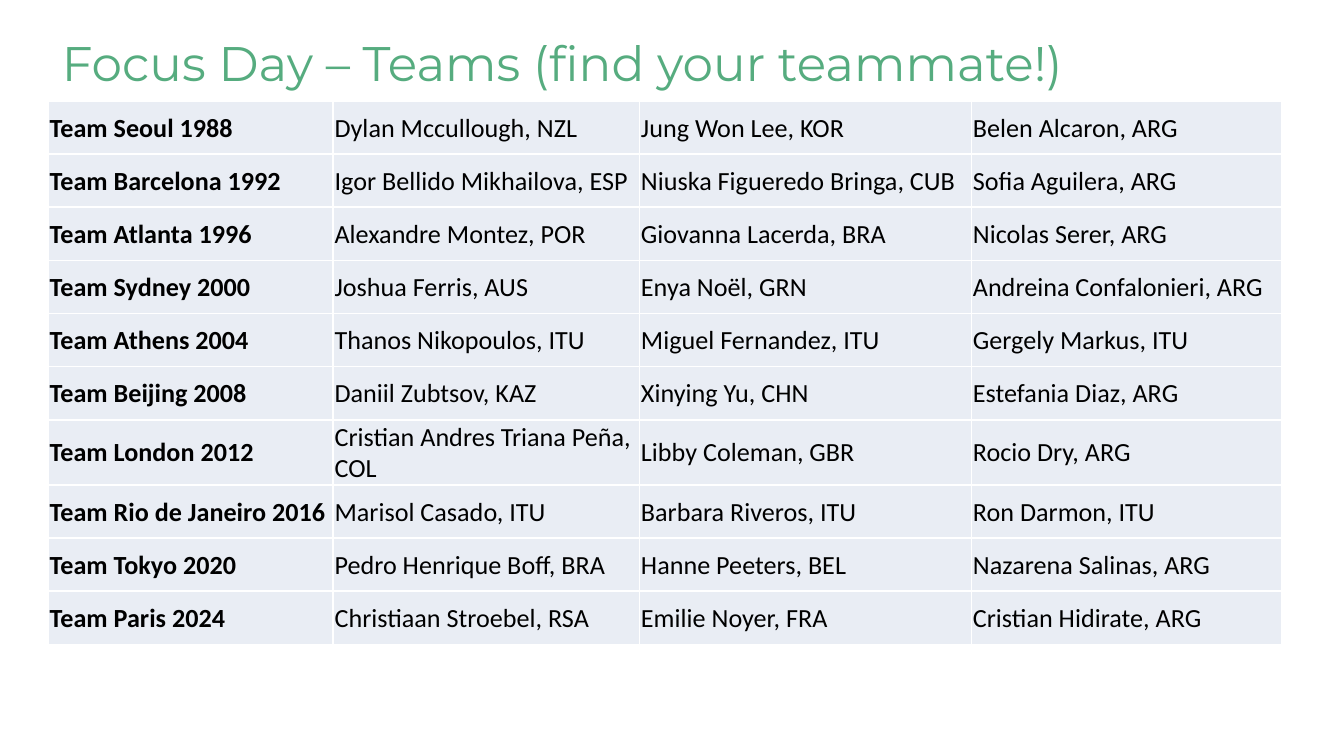
from lxml.etree import SubElement
from pptx import Presentation
from pptx.dml.color import RGBColor
from pptx.enum.text import MSO_ANCHOR, PP_ALIGN
from pptx.oxml.ns import qn
from pptx.util import Inches, Pt

GREEN = RGBColor(0x56, 0xAC, 0x7F)
PALE = RGBColor(0xE9, 0xED, 0xF4)
WHITE = RGBColor(0xFF, 0xFF, 0xFF)
BLACK = RGBColor(0, 0, 0)

TEAMS = [
    ("Team Seoul 1988", "Dylan Mccullough, NZL", "Jung Won Lee, KOR", "Belen Alcaron, ARG"),
    ("Team Barcelona 1992", "Igor Bellido Mikhailova, ESP", "Niuska Figueredo Bringa, CUB", "Sofia Aguilera, ARG"),
    ("Team Atlanta 1996", "Alexandre Montez, POR", "Giovanna Lacerda, BRA", "Nicolas Serer, ARG"),
    ("Team Sydney 2000", "Joshua Ferris, AUS", "Enya Noël, GRN", "Andreina Confalonieri, ARG"),
    ("Team Athens 2004", "Thanos Nikopoulos, ITU", "Miguel Fernandez, ITU", "Gergely Markus, ITU"),
    ("Team Beijing 2008", "Daniil Zubtsov, KAZ", "Xinying Yu, CHN", "Estefania Diaz, ARG"),
    ("Team London 2012", "Cristian Andres Triana Peña, COL", "Libby Coleman, GBR", "Rocio Dry, ARG"),
    ("Team Rio de Janeiro 2016", "Marisol Casado, ITU", "Barbara Riveros, ITU", "Ron Darmon, ITU"),
    ("Team Tokyo 2020", "Pedro Henrique Boff, BRA", "Hanne Peeters, BEL", "Nazarena Salinas, ARG"),
    ("Team Paris 2024", "Christiaan Stroebel, RSA", "Emilie Noyer, FRA", "Cristian Hidirate, ARG"),
]
COLUMNS = [Inches(w) for w in (2.12, 2.28, 2.47, 2.31)]
ROW = Pt(28.5)
LEFT = Inches(0.36)
WIDTH = sum(COLUMNS)


def style_run(r, font, size, color, bold):
    r.font.name = font
    r.font.size = Pt(size)
    r.font.color.rgb = color
    r.font.bold = bold


def add_borders(cell):
    tcPr = cell._tc.get_or_add_tcPr()
    for side in ("a:lnL", "a:lnR", "a:lnT", "a:lnB"):
        ln = SubElement(tcPr, qn(side), w=str(Pt(1)))
        fill = SubElement(ln, qn("a:solidFill"))
        SubElement(fill, qn("a:srgbClr"), val=str(WHITE))


prs = Presentation()
prs.slide_width = Inches(10)
prs.slide_height = prs.slide_width * 9 // 16
s = prs.slides.add_slide(prs.slide_layouts[5])

title = s.shapes.title
title.left, title.top, title.width, title.height = LEFT, Inches(0.19), WIDTH, Inches(0.54)
tf = title.text_frame
tf.text = "Focus Day – Teams (find your teammate!)"
tf.vertical_anchor = MSO_ANCHOR.MIDDLE
p = tf.paragraphs[0]
p.alignment = PP_ALIGN.LEFT
style_run(p.runs[0], "Montserrat", 26, GREEN, False)

table = s.shapes.add_table(
    len(TEAMS), len(COLUMNS), LEFT, Inches(0.75), WIDTH, ROW * len(TEAMS)
).table
table.first_row = False
table.horz_banding = False
for column, width in zip(table.columns, COLUMNS):
    column.width = width

for row, team in zip(table.rows, TEAMS):
    row.height = ROW
    for i, (cell, text) in enumerate(zip(row.cells, team)):
        cell.text = text
        cell.margin_left = cell.margin_right = cell.margin_top = Inches(0.01)
        cell.margin_bottom = 0
        cell.vertical_anchor = MSO_ANCHOR.MIDDLE
        add_borders(cell)
        cell.fill.solid()
        cell.fill.fore_color.rgb = PALE
        style_run(cell.text_frame.paragraphs[0].runs[0], "Calibri", 14, BLACK, i == 0)

prs.save("out.pptx")
